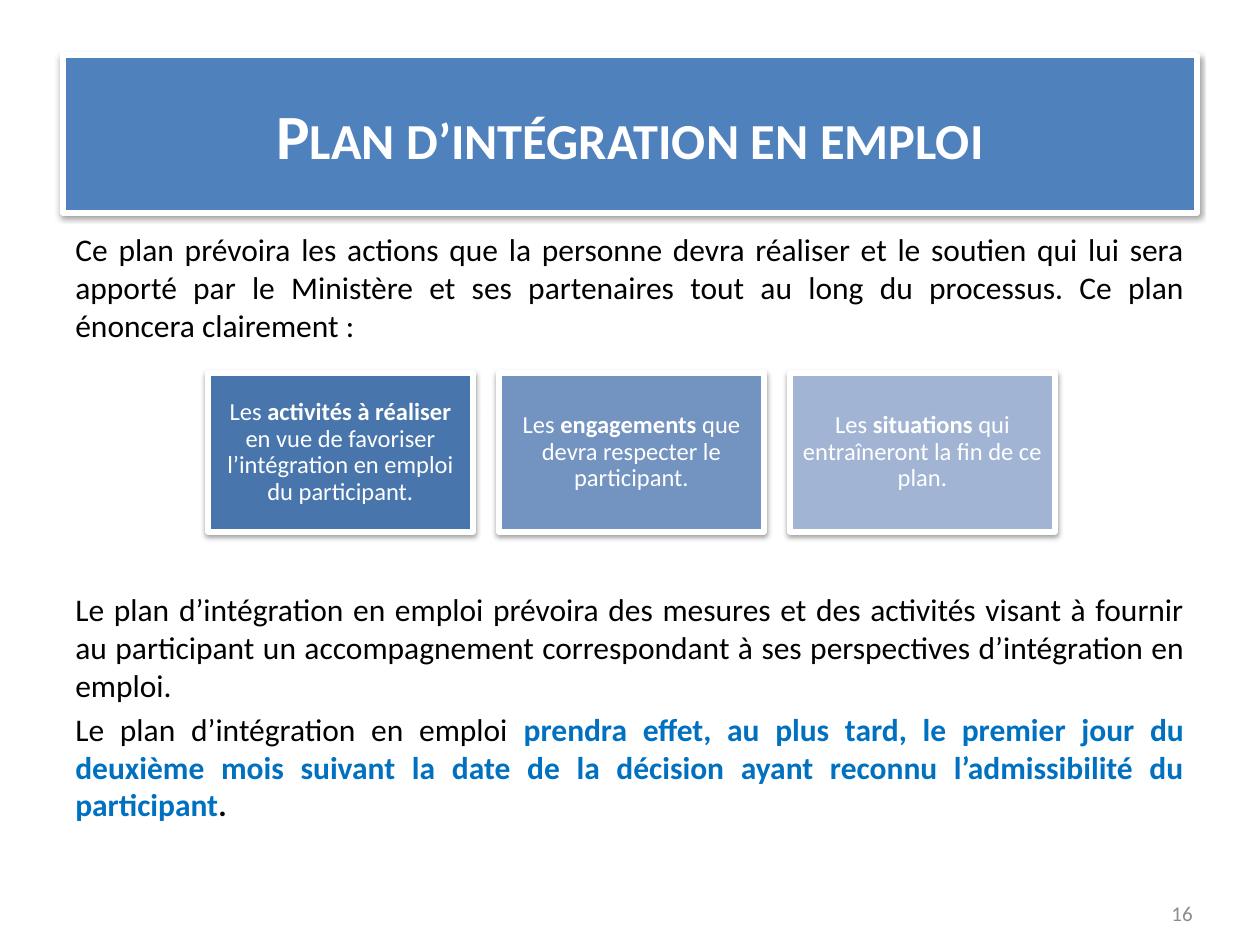
from typing import NamedTuple

import pptx
import pptx.dml.color
import pptx.enum.shapes
import pptx.enum.text
import pptx.oxml
import pptx.oxml.ns
import pptx.util

PX = 914400 / 126
FONT = "Calibri"
COLORS = {
    "title": "4F81BD",
    "white": "FFFFFF",
    "black": "000000",
    "accent": "0070C0",
    "number": "8C8C8C",
}
ALIGN = pptx.enum.text.PP_ALIGN
ANCHOR = pptx.enum.text.MSO_ANCHOR
SHADOW = (
    f'<a:effectLst {pptx.oxml.ns.nsdecls("a")}>'
    '<a:outerShdw blurRad="40000" dist="20000" dir="5400000" rotWithShape="0">'
    '<a:srgbClr val="000000"><a:alpha val="38000"/></a:srgbClr>'
    "</a:outerShdw></a:effectLst>"
)


class Box(NamedTuple):
    left: int
    top: int
    width: int
    height: int


class Run(NamedTuple):
    text: str
    color: str = "black"
    bold: bool = False


class Card(NamedTuple):
    fill: str
    before: str
    strong: str
    after: str


CARDS = [
    Card("4875AC", "Les ", "activités à réaliser ",
         "en vue de favoriser l’intégration en emploi du participant."),
    Card("7393C1", "Les ", "engagements", " que devra respecter le participant."),
    Card("A2B4D4", "Les ", "situations", " qui entraîneront la fin de ce plan."),
]
FIRST_CARD = Box(208, 373, 265, 159)
CARD_PITCH = 291

INTRO = [[Run(
    "Ce plan prévoira les actions que la personne devra réaliser et le soutien "
    "qui lui sera apporté par le Ministère et ses partenaires tout au long du "
    "processus. Ce plan énoncera clairement\u00a0:"
)]]
DETAILS = [
    [Run(
        "Le plan d’intégration en emploi prévoira des mesures et des activités "
        "visant à fournir au participant un accompagnement correspondant à ses "
        "perspectives d’intégration en emploi."
    )],
    [
        Run("Le plan d’intégration en emploi "),
        Run("prendra effet, au plus tard, le premier jour du deuxième mois suivant "
            "la date de la décision ayant reconnu l’admissibilité du participant",
            "accent", True),
        Run(".", "black", True),
    ],
]


def emu(box: Box) -> list[int]:
    return [round(v * PX) for v in box]


def rgb(value: str) -> pptx.dml.color.RGBColor:
    return pptx.dml.color.RGBColor.from_string(value)


def add_runs(p, runs: list[Run], size: int) -> None:
    for run in runs:
        r = p.add_run()
        r.text = run.text
        r.font.name = FONT
        r.font.size = pptx.util.Pt(size)
        r.font.bold = run.bold
        r.font.color.rgb = rgb(COLORS[run.color])


def add_panel(s, box: Box, fill: str, runs: list[Run], size: int):
    """Draw a white-framed rectangle with a soft shadow and centred text."""
    sp = s.shapes.add_shape(pptx.enum.shapes.MSO_SHAPE.RECTANGLE, *emu(box))
    sp.fill.solid()
    sp.fill.fore_color.rgb = rgb(fill)
    sp.line.color.rgb = rgb(COLORS["white"])
    sp.line.width = pptx.util.Pt(3)
    sp._element.spPr.append(pptx.oxml.parse_xml(SHADOW))
    tf = sp.text_frame
    tf.word_wrap = True
    tf.vertical_anchor = ANCHOR.MIDDLE
    p = tf.paragraphs[0]
    p.alignment = ALIGN.CENTER
    add_runs(p, runs, size)
    return sp


def add_card(s, box: Box, card: Card) -> None:
    runs = [
        Run(card.before, "white"),
        Run(card.strong, "white", True),
        Run(card.after, "white"),
    ]
    tf = add_panel(s, box, card.fill, runs, 14).text_frame
    tf.margin_left = tf.margin_right = round(8 * PX)
    tf.margin_top = tf.margin_bottom = round(8 * PX)
    tf.paragraphs[0].line_spacing = 0.9


def add_text(s, box: Box, paragraphs: list[list[Run]], size: int,
             align=ALIGN.JUSTIFY, anchor=ANCHOR.TOP) -> None:
    tf = s.shapes.add_textbox(*emu(box)).text_frame
    tf.word_wrap = True
    tf.vertical_anchor = anchor
    for i, runs in enumerate(paragraphs):
        p = tf.add_paragraph() if i else tf.paragraphs[0]
        p.alignment = align
        if i:
            p.space_before = pptx.util.Pt(3.6)
        add_runs(p, runs, size)


def main() -> None:
    prs = pptx.Presentation()
    prs.slide_width = pptx.util.Inches(10)
    prs.slide_height = pptx.util.Inches(7.5)
    s = prs.slides.add_slide(prs.slide_layouts[6])

    title = add_panel(s, Box(63, 55, 1134, 158), COLORS["title"],
                      [Run("Plan d’intégration en emploi", "white", True)], 36)
    title_run = title.text_frame.paragraphs[0].runs[0]
    title_run._r.get_or_add_rPr().set("cap", "small")

    add_text(s, Box(63, 224, 1134, 130), INTRO, 18)
    for i, card in enumerate(CARDS):
        add_card(s, FIRST_CARD._replace(left=FIRST_CARD.left + i * CARD_PITCH), card)
    add_text(s, Box(63, 584, 1134, 275), DETAILS, 18)
    add_text(s, Box(911, 888, 294, 50), [[Run("16", "number")]], 12,
             ALIGN.RIGHT, ANCHOR.MIDDLE)

    prs.save("out.pptx")


if __name__ == "__main__":
    main()
